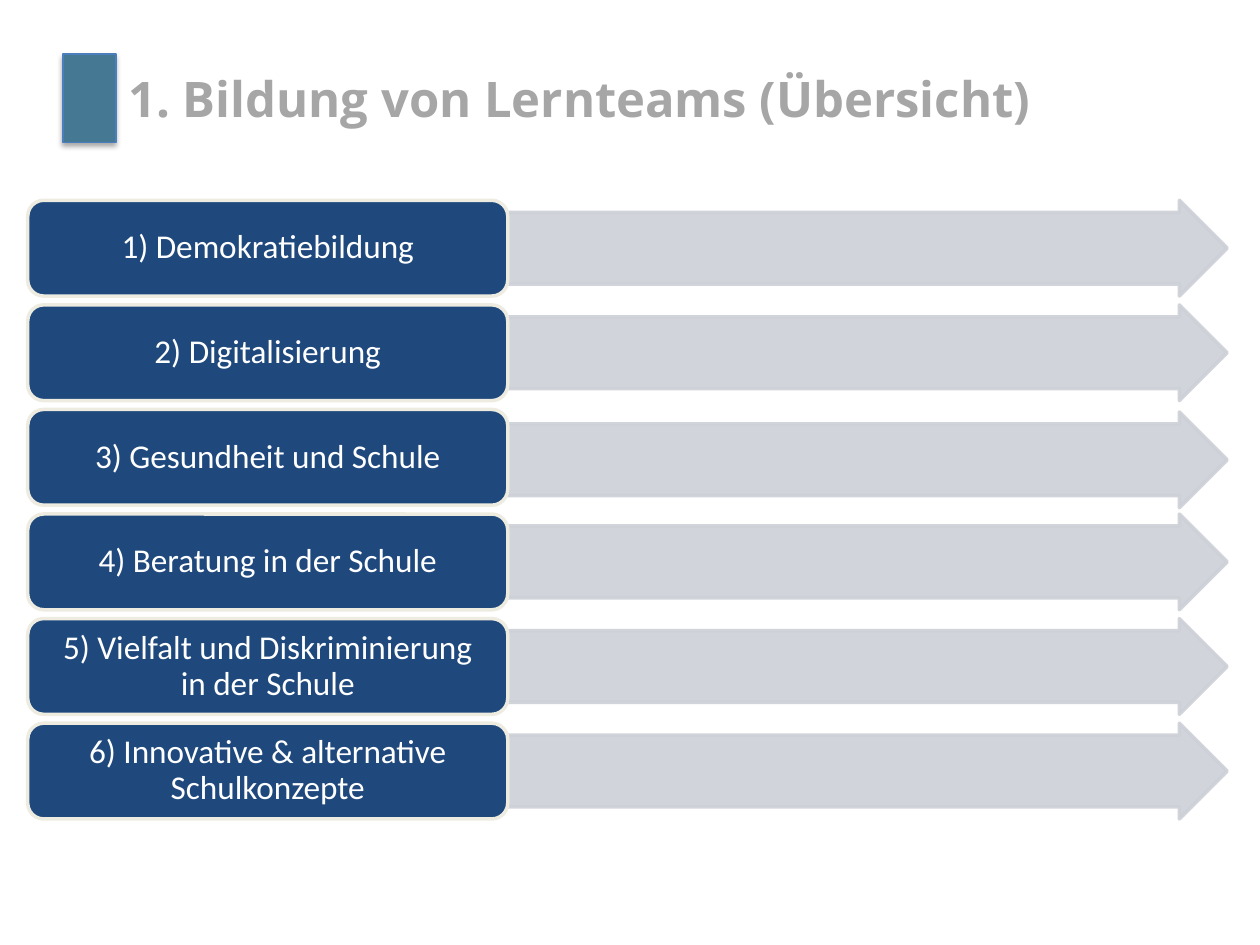
from dataclasses import dataclass

from lxml import etree
from pptx import Presentation
from pptx.dml.color import RGBColor
from pptx.enum.shapes import MSO_SHAPE
from pptx.enum.text import MSO_ANCHOR, PP_ALIGN
from pptx.oxml.ns import qn
from pptx.util import Inches, Pt

RECTANGLE = MSO_SHAPE.RECTANGLE
ROUNDED = MSO_SHAPE.ROUNDED_RECTANGLE
ARROW = MSO_SHAPE.RIGHT_ARROW
MIDDLE = MSO_ANCHOR.MIDDLE
CENTER = PP_ALIGN.CENTER

SLIDE_WIDTH, SLIDE_HEIGHT = 10, 7.5
LABEL_LEFT, LABEL_WIDTH = 0.22, 3.81
ARROW_LEFT, ARROW_WIDTH = LABEL_LEFT + LABEL_WIDTH, 5.71
FIRST_ROW, ROW_PITCH, ROW_HEIGHT = 1.59, 0.83, 0.76
ARROW_NUDGES = {2: 0.02}  # the third arrow sits slightly lower

TITLE = "1. Bildung von Lernteams (Übersicht)"
TOPICS = [
    "1) Demokratiebildung",
    "2) Digitalisierung",
    "3) Gesundheit und Schule",
    "4) Beratung in der Schule",
    "5) Vielfalt und Diskriminierung in der Schule",
    "6) Innovative & alternative Schulkonzepte",
]


@dataclass(frozen=True)
class Theme:
    marker: str = "457993"
    marker_line: str = "4B7EBC"
    title: str = "A6A6A6"
    arrow: str = "CDD0D7"
    label: str = "1F497D"
    label_line: str = "EEECE1"
    label_text: str = "FFFFFF"
    title_font: str = "Open Sans"
    label_font: str = "Calibri"
    title_size: float = 28
    label_size: float = 19


THEME = Theme()


def add_block(page, kind, bounds, fill, line, line_width):
    block = page.shapes.add_shape(kind, *map(Inches, bounds))
    block.shadow.inherit = False
    block.fill.solid()
    block.fill.fore_color.rgb = RGBColor.from_string(fill)
    block.line.color.rgb = RGBColor.from_string(line)
    block.line.width = Pt(line_width)
    return block


def write_text(box, text, font_name, size, color, bold=False):
    frame = box.text_frame
    frame.word_wrap = True
    frame.vertical_anchor = MIDDLE
    para = frame.paragraphs[0]
    para.text = text
    para.font.name = font_name
    para.font.size = Pt(size)
    para.font.bold = bold
    para.font.color.rgb = RGBColor.from_string(color)
    return para


def set_opacity(element, percent):
    """Make every solid colour below the element partly transparent."""
    for color in element.iter(qn("a:srgbClr")):
        etree.SubElement(color, qn("a:alpha"), val=str(percent * 1000))


def add_drop_shadow(block):
    effects = block._element.spPr.find(qn("a:effectLst"))
    shadow = etree.SubElement(
        effects, qn("a:outerShdw"), blurRad=str(Pt(3.1)), dist=str(Pt(1.8)),
        dir="5400000", rotWithShape="0")
    color = etree.SubElement(shadow, qn("a:srgbClr"), val="000000")
    etree.SubElement(color, qn("a:alpha"), val="35000")


def add_heading(page):
    marker = add_block(page, RECTANGLE, (0.5, 0.43, 0.42, 0.7),
                       THEME.marker, THEME.marker_line, 0.75)
    add_drop_shadow(marker)
    box = page.shapes.add_textbox(*map(Inches, (0.92, 0.43, 7.74, 0.7)))
    write_text(box, TITLE, THEME.title_font, THEME.title_size, THEME.title, bold=True)


def add_arrow(page, top):
    arrow = add_block(page, ARROW, (ARROW_LEFT, top, ARROW_WIDTH, ROW_HEIGHT),
                      THEME.arrow, THEME.arrow, 2)
    arrow.adjustments[0] = 0.75
    arrow.adjustments[1] = 0.5
    set_opacity(arrow._element.spPr, 90)


def add_label(page, top, topic):
    label = add_block(page, ROUNDED, (LABEL_LEFT, top, LABEL_WIDTH, ROW_HEIGHT),
                      THEME.label, THEME.label_line, 2)
    frame = label.text_frame
    frame.margin_left = frame.margin_right = Inches(0.12)
    frame.margin_top = frame.margin_bottom = Inches(0.08)
    para = write_text(label, topic, THEME.label_font, THEME.label_size, THEME.label_text)
    para.alignment = CENTER
    para.line_spacing = 0.9


def main():
    deck = Presentation()
    deck.slide_width = Inches(SLIDE_WIDTH)
    deck.slide_height = Inches(SLIDE_HEIGHT)
    page = deck.slides.add_slide(deck.slide_layouts[6])
    add_heading(page)
    for row, topic in enumerate(TOPICS):
        top = FIRST_ROW + row * ROW_PITCH
        add_arrow(page, top + ARROW_NUDGES.get(row, 0))
        add_label(page, top, topic)
    deck.save("out.pptx")


if __name__ == "__main__":
    main()
